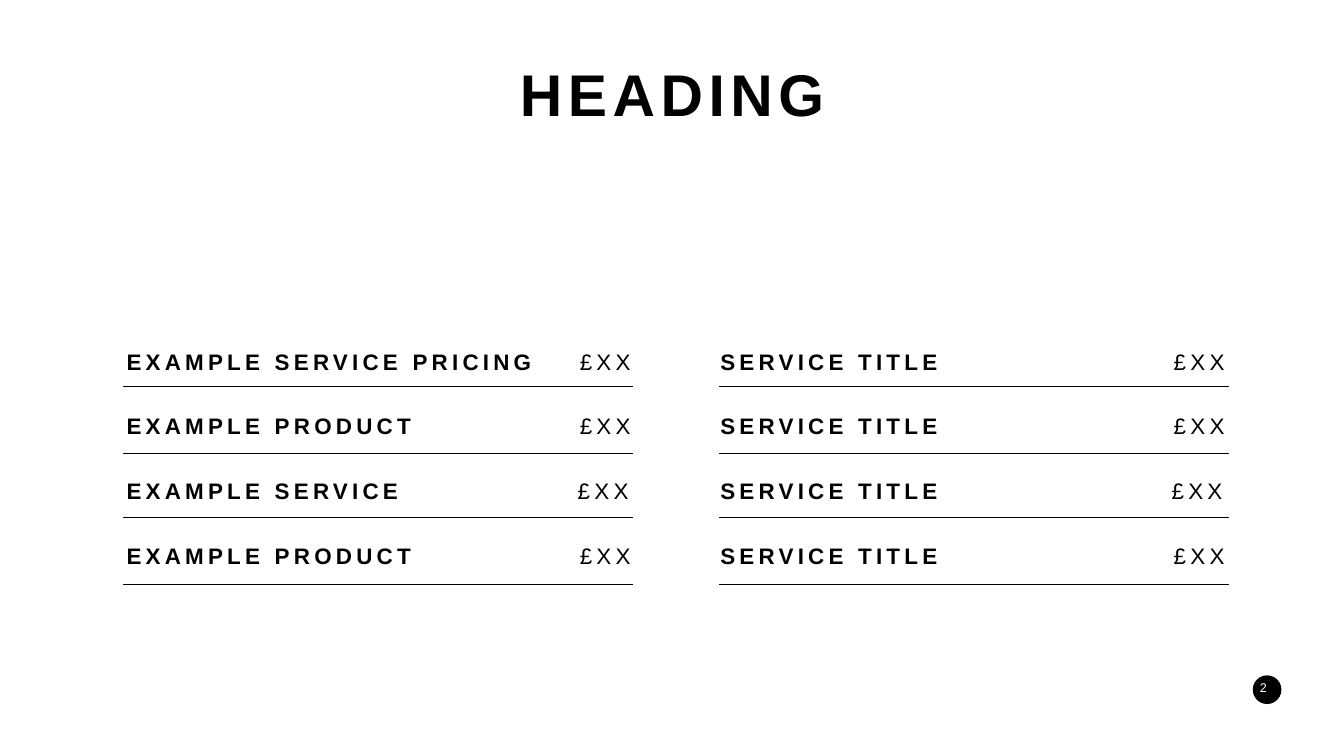
"""Build a two-column price list slide with a heading and a page number."""
from pptx import Presentation
from pptx.dml.color import RGBColor
from pptx.enum.shapes import MSO_CONNECTOR, MSO_SHAPE
from pptx.enum.text import MSO_ANCHOR, PP_ALIGN
from pptx.oxml.ns import qn
from pptx.util import Pt
from lxml.etree import SubElement

COLORS = {"ink": "000000", "paper": "FFFFFF"}
FONT = "Arial"


def rgb(name):
    return RGBColor.from_string(COLORS[name])


def write(sp, text, size, align, margins, bold=False, spacing=0, color="ink", anchor=MSO_ANCHOR.TOP):
    tf = sp.text_frame
    tf.word_wrap = False
    tf.vertical_anchor = anchor
    tf.margin_left, tf.margin_top, tf.margin_right, tf.margin_bottom = map(Pt, margins)
    p = tf.paragraphs[0]
    p.alignment = align
    p.line_spacing = 1.0
    r = p.add_run()
    r.text = text
    r.font.name = FONT
    r.font.size = Pt(size)
    r.font.bold = bold
    r.font.color.rgb = rgb(color)
    if spacing:
        r.font._element.set("spc", str(spacing * 100))


prs = Presentation()
prs.slide_width, prs.slide_height = Pt(1919.5), Pt(1080)
s = prs.slides.add_slide(prs.slide_layouts[5])
s.background.fill.solid()
s.background.fill.fore_color.rgb = rgb("paper")

title = s.shapes.title
title.left, title.top, title.width, title.height = Pt(733), Pt(77.8), Pt(454.3), Pt(108.7)
write(title, "HEADING", 84, PP_ALIGN.CENTER, (7.2, 3.6, 7.2, 3.6), True, 8, anchor=MSO_ANCHOR.BOTTOM)

columns = [
    (175.7, 175.7, 812, [("EXAMPLE SERVICE PRICING", 619), ("EXAMPLE PRODUCT", 430.6),
                         ("EXAMPLE SERVICE", 411.8), ("EXAMPLE PRODUCT", 430.6)]),
    (1023.8, 1026.7, 1660.3, [("SERVICE TITLE", 324.7)] * 4),
]
rules = [552.2, 648, 738.7, 834.5]
price_shifts = [0, 0, -2.9, 0]
row_top, row_step, row_height = 489.6, 92.4, 46.1
rule_width, price_width = 727.9, 93.6
margins = (5, 7, 5, 2)

for name_x, rule_x, price_x, items in columns:
    for i, (name, width) in enumerate(items):
        y = row_top + i * row_step
        sp = s.shapes.add_textbox(Pt(name_x), Pt(y), Pt(width), Pt(row_height))
        write(sp, name, 32, PP_ALIGN.LEFT, margins, True, 6)
        sp = s.shapes.add_textbox(Pt(price_x + price_shifts[i]), Pt(y), Pt(price_width), Pt(row_height))
        write(sp, "£XX", 32, PP_ALIGN.RIGHT, margins, spacing=6)
        rule = s.shapes.add_connector(MSO_CONNECTOR.STRAIGHT, Pt(rule_x), Pt(rules[i]),
                                      Pt(rule_x + rule_width), Pt(rules[i]))
        rule.line.color.rgb = rgb("ink")
        rule.line.width = Pt(0.75)
        SubElement(rule._element.spPr, qn("a:effectLst"))

dot = s.shapes.add_shape(MSO_SHAPE.OVAL, Pt(1789.2), Pt(964.8), Pt(41), Pt(41))
dot.shadow.inherit = False
dot.fill.solid()
dot.fill.fore_color.rgb = rgb("ink")
dot.line.fill.background()
sp = s.shapes.add_textbox(Pt(1777.7), Pt(964.8), Pt(63.4), Pt(36))
write(sp, "2", 18, PP_ALIGN.CENTER, (14.4, 7.2, 24.4, 7.2), color="paper")

prs.save("out.pptx")
